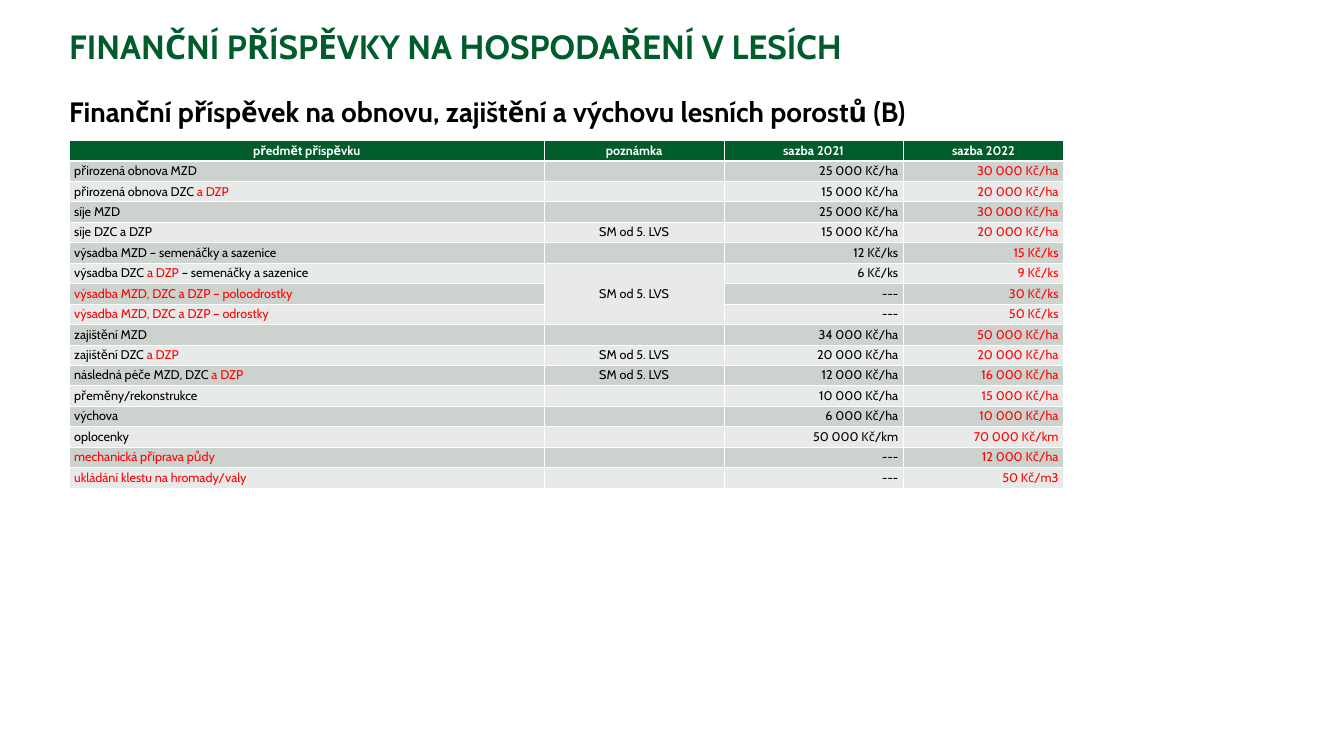
import pptx
import pptx.dml.color
import pptx.enum.text
import pptx.oxml
import pptx.oxml.ns
import pptx.util
from lxml import etree

Pt = pptx.util.Pt
RGBColor = pptx.dml.color.RGBColor
ALIGN = pptx.enum.text.PP_ALIGN
ANCHOR = pptx.enum.text.MSO_ANCHOR
qn = pptx.oxml.ns.qn

GREEN = RGBColor(0x00, 0x5C, 0x2B)
BLACK = RGBColor(0x00, 0x00, 0x00)
RED = RGBColor(0xFF, 0x00, 0x00)
WHITE = RGBColor(0xFF, 0xFF, 0xFF)
BANDS = (RGBColor(0xCC, 0xD2, 0xCD), RGBColor(0xE7, 0xEA, 0xE8))

TITLE_FORMAT = {"name": "Cabin", "size": Pt(48), "bold": True}
SUBTITLE_FORMAT = {"name": "Cabin", "size": Pt(40), "bold": True}
HEADER_FORMAT = {"name": "Cabin", "size": Pt(18), "bold": True}
ENTRY_FORMAT = {"name": "Cabin", "size": Pt(18), "bold": False}
BOX_FORMAT = {"word_wrap": True, "vertical_anchor": ANCHOR.TOP, "margin_left": 0,
              "margin_top": 0, "margin_right": 0, "margin_bottom": 0}

SPRUCE_NOTE = "SM od 5. LVS"
COLUMN_WIDTHS = (679, 256.3, 256.3, 229)
ROW_HEIGHT = 29.2
COLUMN_ALIGNS = (ALIGN.LEFT, ALIGN.CENTER, ALIGN.RIGHT, ALIGN.RIGHT)
HEADINGS = ("předmět příspěvku", "poznámka", "sazba 2021", "sazba 2022")
RATES = (
    ("přirozená obnova MZD", "", "25 000 Kč/ha", "30 000 Kč/ha"),
    ("přirozená obnova DZC |a DZP", "", "15 000 Kč/ha", "20 000 Kč/ha"),
    ("síje MZD", "", "25 000 Kč/ha", "30 000 Kč/ha"),
    ("síje DZC a DZP", SPRUCE_NOTE, "15 000 Kč/ha", "20 000 Kč/ha"),
    ("výsadba MZD – semenáčky a sazenice", "", "12 Kč/ks", "15 Kč/ks"),
    ("výsadba DZC |a DZP |– semenáčky a sazenice", SPRUCE_NOTE, "6 Kč/ks", "9 Kč/ks"),
    ("|výsadba MZD, DZC a DZP – poloodrostky", "", "---", "30 Kč/ks"),
    ("|výsadba MZD, DZC a DZP – odrostky", "", "---", "50 Kč/ks"),
    ("zajištění MZD", "", "34 000 Kč/ha", "50 000 Kč/ha"),
    ("zajištění DZC |a DZP", SPRUCE_NOTE, "20 000 Kč/ha", "20 000 Kč/ha"),
    ("následná péče MZD, DZC |a DZP", SPRUCE_NOTE, "12 000 Kč/ha", "16 000 Kč/ha"),
    ("přeměny/rekonstrukce", "", "10 000 Kč/ha", "15 000 Kč/ha"),
    ("výchova", "", "6 000 Kč/ha", "10 000 Kč/ha"),
    ("oplocenky", "", "50 000 Kč/km", "70 000 Kč/km"),
    ("|mechanická příprava půdy", "", "---", "12 000 Kč/ha"),
    ("|ukládání klestu na hromady/valy", "", "---", "50 Kč/m3"),
)
PLANTING_ROWS = (6, 8)


def apply_format(target, values):
    """Set each named attribute of the target."""
    for attribute, value in values.items():
        setattr(target, attribute, value)


def add_words(paragraph, words, font_format, colors):
    """Write the parts split by bars, alternating between the colours."""
    for index, part in enumerate(words.split("|")):
        if part:
            run = paragraph.add_run()
            run.text = part
            apply_format(run.font, font_format)
            run.font.color.rgb = colors[index % len(colors)]


def add_heading(slide, box, words, font_format, color):
    """Place one heading in the given box."""
    heading = slide.shapes.add_textbox(*map(Pt, box))
    apply_format(heading.text_frame, BOX_FORMAT)
    paragraph = heading.text_frame.paragraphs[0]
    paragraph.line_spacing = 0.9
    add_words(paragraph, words, font_format, (color,))


def add_borders(cell, top, bottom):
    """Draw white borders with the given top and bottom widths."""
    properties = cell._tc.get_or_add_tcPr()
    for side, width in (("L", 1), ("R", 1), ("T", top), ("B", bottom)):
        line = etree.SubElement(properties, qn(f"a:ln{side}"), w=str(Pt(width)))
        fill = etree.SubElement(line, qn("a:solidFill"))
        etree.SubElement(fill, qn("a:srgbClr"), val=str(WHITE))


def fill_cell(cell, words, align, font_format, colors, background, borders):
    """Style one cell and write its words."""
    add_borders(cell, *borders)
    cell.fill.solid()
    cell.fill.fore_color.rgb = background
    paragraph = cell.text_frame.paragraphs[0]
    paragraph.alignment = align
    add_words(paragraph, words, font_format, colors)


def add_rate_table(slide, left, top):
    """Build the table of rates from its top left corner."""
    row_count = len(RATES) + 1
    box = (left, top, sum(COLUMN_WIDTHS), ROW_HEIGHT * row_count)
    table = slide.shapes.add_table(row_count, len(HEADINGS), *map(Pt, box)).table
    for column, width in zip(table.columns, COLUMN_WIDTHS):
        column.width = Pt(width)
    for row in table.rows:
        row.height = Pt(ROW_HEIGHT)
    for column, heading in enumerate(HEADINGS):
        fill_cell(table.cell(0, column), heading, ALIGN.CENTER, HEADER_FORMAT,
                  (WHITE,), GREEN, (1, 3))
    for row, rate in enumerate(RATES, start=1):
        borders = (3 if row == 1 else 1, 1)
        for column, words in enumerate(rate):
            colors = (RED,) if column == 3 else (BLACK, RED)
            fill_cell(table.cell(row, column), words, COLUMN_ALIGNS[column],
                      ENTRY_FORMAT, colors, BANDS[(row - 1) % 2], borders)
    first, last = PLANTING_ROWS
    table.cell(first, 1).merge(table.cell(last, 1))
    table.cell(first, 1).vertical_anchor = ANCHOR.MIDDLE


def main():
    """Build and save the slide."""
    presentation = pptx.Presentation()
    apply_format(presentation, {"slide_width": Pt(1920), "slide_height": Pt(1080)})
    slide = presentation.slides.add_slide(presentation.slide_layouts[6])
    left, width = 98.8, 1723.5
    add_heading(slide, (left, 44, width, 96.4),
                "FINANČNÍ PŘÍSPĚVKY NA HOSPODAŘENÍ V LESÍCH", TITLE_FORMAT, GREEN)
    add_heading(slide, (left, 140.4, width, 874.8),
                "Finanční příspěvek na obnovu, zajištění a výchovu lesních porostů (B)",
                SUBTITLE_FORMAT, BLACK)
    add_rate_table(slide, left, 200.6)
    presentation.save("out.pptx")


if __name__ == "__main__":
    main()
